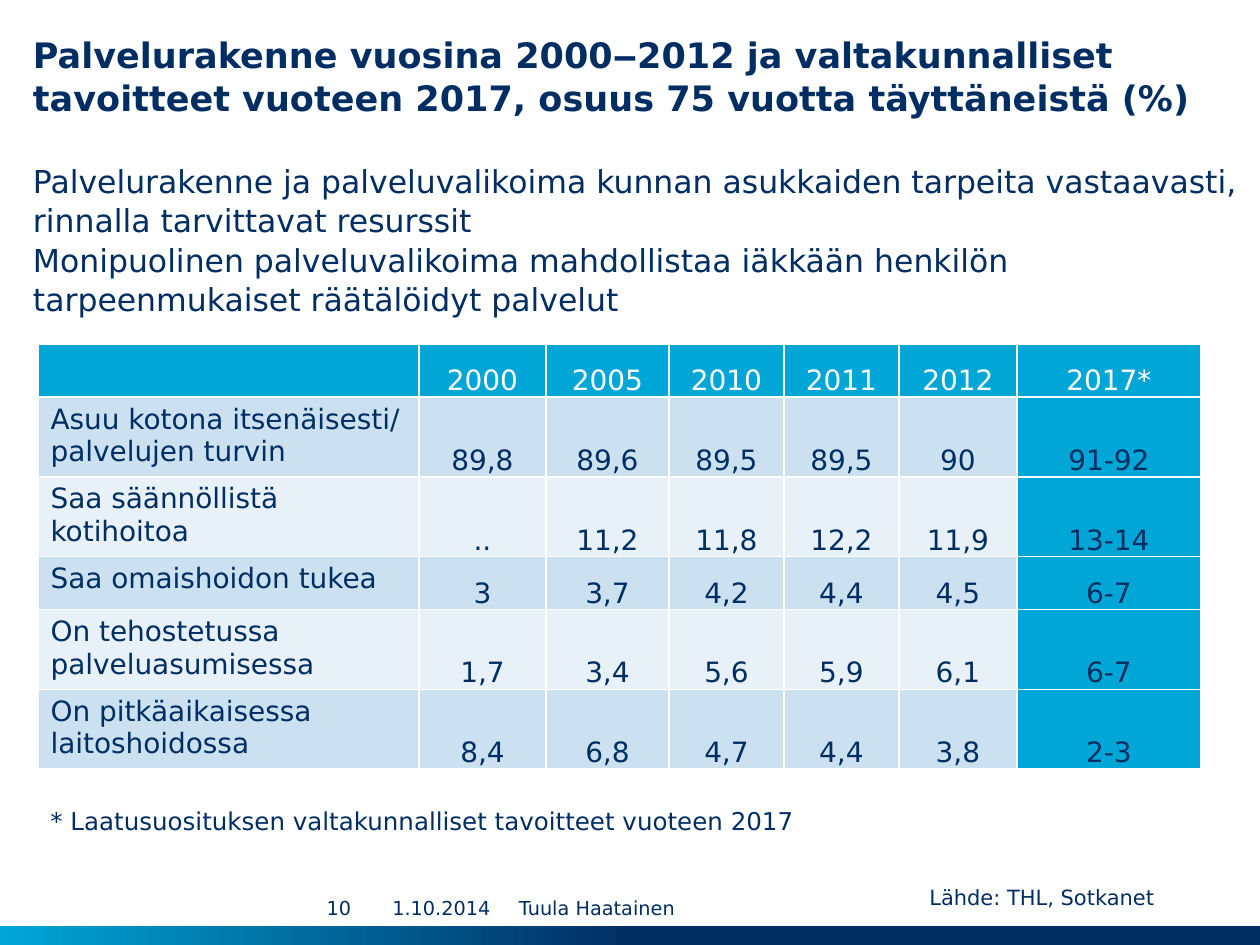
import pptx
import pptx.util
import pptx.dml.color
import pptx.enum.shapes
import pptx.enum.text
import lxml.etree

PX = 914400 // 126
FONT = "DejaVu Sans"
NAVY, CYAN, WHITE = "002E63", "00A6D6", "FFFFFF"
BANDS = ("CCE1F0", "E7F1F7")
ALIGN = pptx.enum.text.PP_ALIGN
ANCHOR = pptx.enum.text.MSO_ANCHOR


def rgb(value):
    return pptx.dml.color.RGBColor.from_string(value)


def format_runs(para, size, color=NAVY, bold=False):
    for span in para.runs:
        span.font.name = FONT
        span.font.size = pptx.util.Pt(size)
        span.font.bold = bold
        span.font.color.rgb = rgb(color)


deck = pptx.Presentation()
deck.slide_width = 1260 * PX
deck.slide_height = 945 * PX
page = deck.slides.add_slide(deck.slide_layouts[6])

# Gradient band along the bottom
band = page.shapes.add_shape(pptx.enum.shapes.MSO_SHAPE.RECTANGLE,
                             0, 926 * PX, 1260 * PX, 20 * PX)
band.shadow.inherit = False
band.line.fill.background()
band.fill.gradient()
band.fill.gradient_angle = 180
for stop, (position, color) in zip(band.fill.gradient_stops, ((0.5, NAVY), (1, CYAN))):
    stop.position = position
    stop.color.rgb = rgb(color)

# Title and introduction
box = page.shapes.add_textbox(33 * PX, 16 * PX, 1217 * PX, 308 * PX)
frame = box.text_frame
frame.word_wrap = True
frame.vertical_anchor = ANCHOR.BOTTOM
frame.margin_left = frame.margin_right = 0
frame.text = "\n".join((
    "Palvelurakenne vuosina 2000‒2012 ja valtakunnalliset tavoitteet vuoteen 2017, osuus 75 vuotta täyttäneistä (%)",
    "Palvelurakenne ja palveluvalikoima kunnan asukkaiden tarpeita vastaavasti, rinnalla tarvittavat resurssit",
    "Monipuolinen palveluvalikoima mahdollistaa iäkkään henkilön tarpeenmukaiset räätälöidyt palvelut",
))
for index, para in enumerate(frame.paragraphs):
    para.line_spacing = 1.04
    format_runs(para, 18 if index else 20, bold=index == 0)
frame.paragraphs[1].space_before = pptx.util.Pt(24)

# Table of service shares
rows = [
    ("", "2000", "2005", "2010", "2011", "2012", "2017*"),
    ("Asuu kotona itsenäisesti/\npalvelujen turvin", "89,8", "89,6", "89,5", "89,5", "90", "91-92"),
    ("Saa säännöllistä kotihoitoa", "..", "11,2", "11,8", "12,2", "11,9", "13-14"),
    ("Saa omaishoidon tukea", "3", "3,7", "4,2", "4,4", "4,5", "6-7"),
    ("On tehostetussa palveluasumisessa", "1,7", "3,4", "5,6", "5,9", "6,1", "6-7"),
    ("On pitkäaikaisessa laitoshoidossa", "8,4", "6,8", "4,7", "4,4", "3,8", "2-3"),
]
widths = (381, 127, 123, 115, 115, 118, 184)
heights = (53, 78, 77, 53, 78, 77)
table = page.shapes.add_table(len(rows), len(widths), 38 * PX, 344 * PX,
                              sum(widths) * PX, sum(heights) * PX).table
for column, width in zip(table.columns, widths):
    column.width = width * PX
for row, height in zip(table.rows, heights):
    row.height = height * PX

namespace = "http://schemas.openxmlformats.org/drawingml/2006/main"
for r, values in enumerate(rows):
    for c, value in enumerate(values):
        cell = table.cell(r, c)
        cell.text = value
        if c:
            cell.vertical_anchor = ANCHOR.BOTTOM
            cell.margin_left = cell.margin_right = cell.margin_top = PX
            cell.margin_bottom = 0
        for para in cell.text_frame.paragraphs:
            para.alignment = ALIGN.CENTER if c else ALIGN.LEFT
            format_runs(para, 16, NAVY if r else WHITE)
        # White borders come before the fill in the cell properties
        properties = cell._tc.get_or_add_tcPr()
        for side in ("lnL", "lnR", "lnT", "lnB"):
            properties.append(lxml.etree.fromstring(
                f'<a:{side} xmlns:a="{namespace}" w="12700"><a:solidFill>'
                f'<a:srgbClr val="{WHITE}"/></a:solidFill></a:{side}>'))
        cell.fill.solid()
        highlighted = r == 0 or c == len(widths) - 1
        cell.fill.fore_color.rgb = rgb(CYAN if highlighted else BANDS[(r - 1) % 2])

# Footnote and source
for text, left, top, width, height, size, wrap in (
    ("* Laatusuosituksen valtakunnalliset tavoitteet vuoteen 2017", 38, 800, 776, 43, 14, False),
    ("Lähde: THL, Sotkanet", 917, 878, 333, 38, 12, True),
):
    box = page.shapes.add_textbox(left * PX, top * PX, width * PX, height * PX)
    box.text_frame.word_wrap = wrap
    box.text_frame.text = text
    format_runs(box.text_frame.paragraphs[0], size)

# Footer: page number, date, speaker
for text, left, width, align in (
    ("10", 312, 54, ALIGN.CENTER),
    ("1.10.2014", 379, 125, ALIGN.CENTER),
    ("Tuula Haatainen", 519, 427, ALIGN.LEFT),
):
    box = page.shapes.add_textbox(left * PX, 890 * PX, width * PX, 36 * PX)
    frame = box.text_frame
    frame.word_wrap = True
    frame.vertical_anchor = ANCHOR.MIDDLE
    frame.margin_left = frame.margin_right = frame.margin_top = frame.margin_bottom = 0
    frame.text = text
    frame.paragraphs[0].alignment = align
    format_runs(frame.paragraphs[0], 11)

deck.save("out.pptx")
